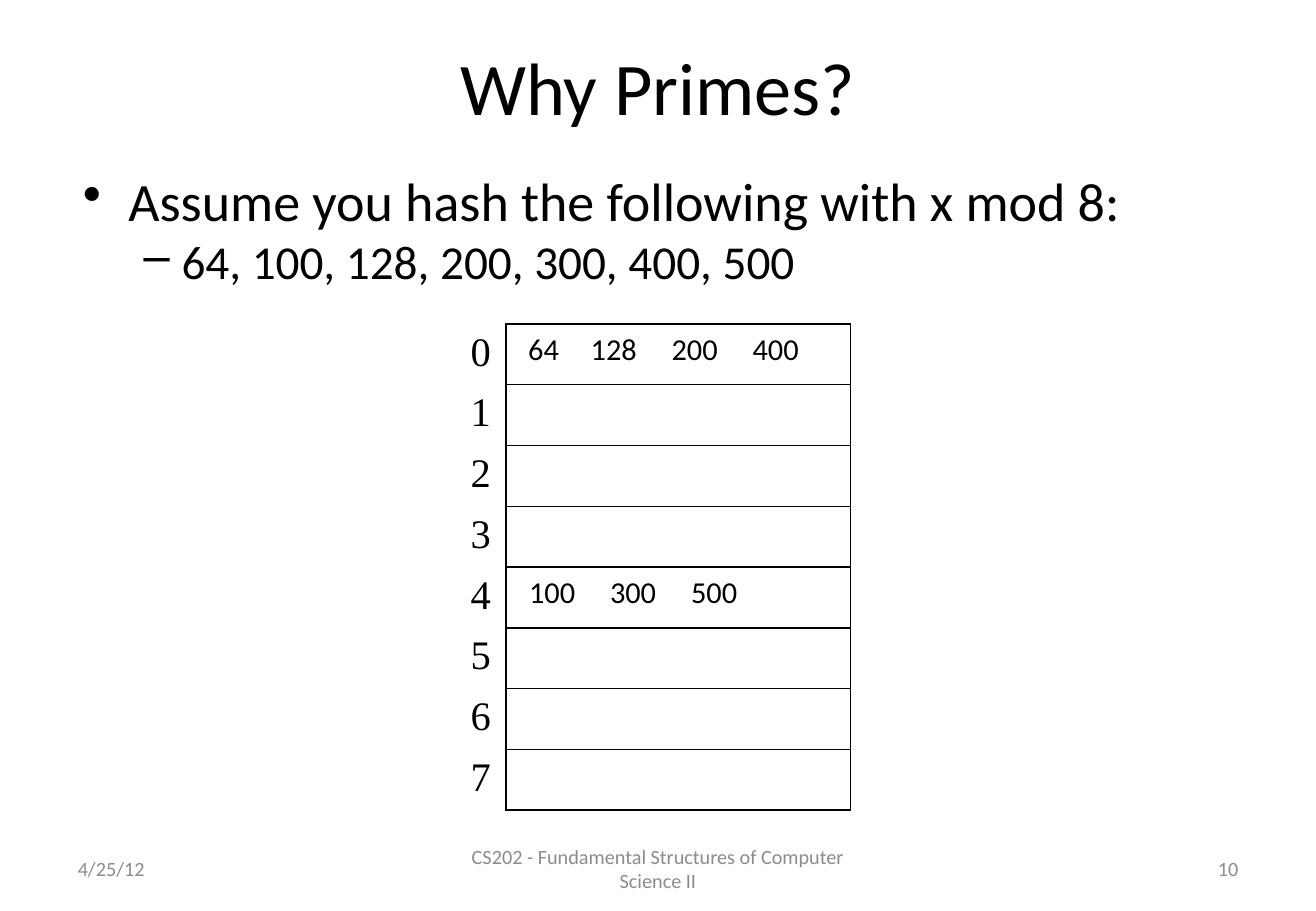
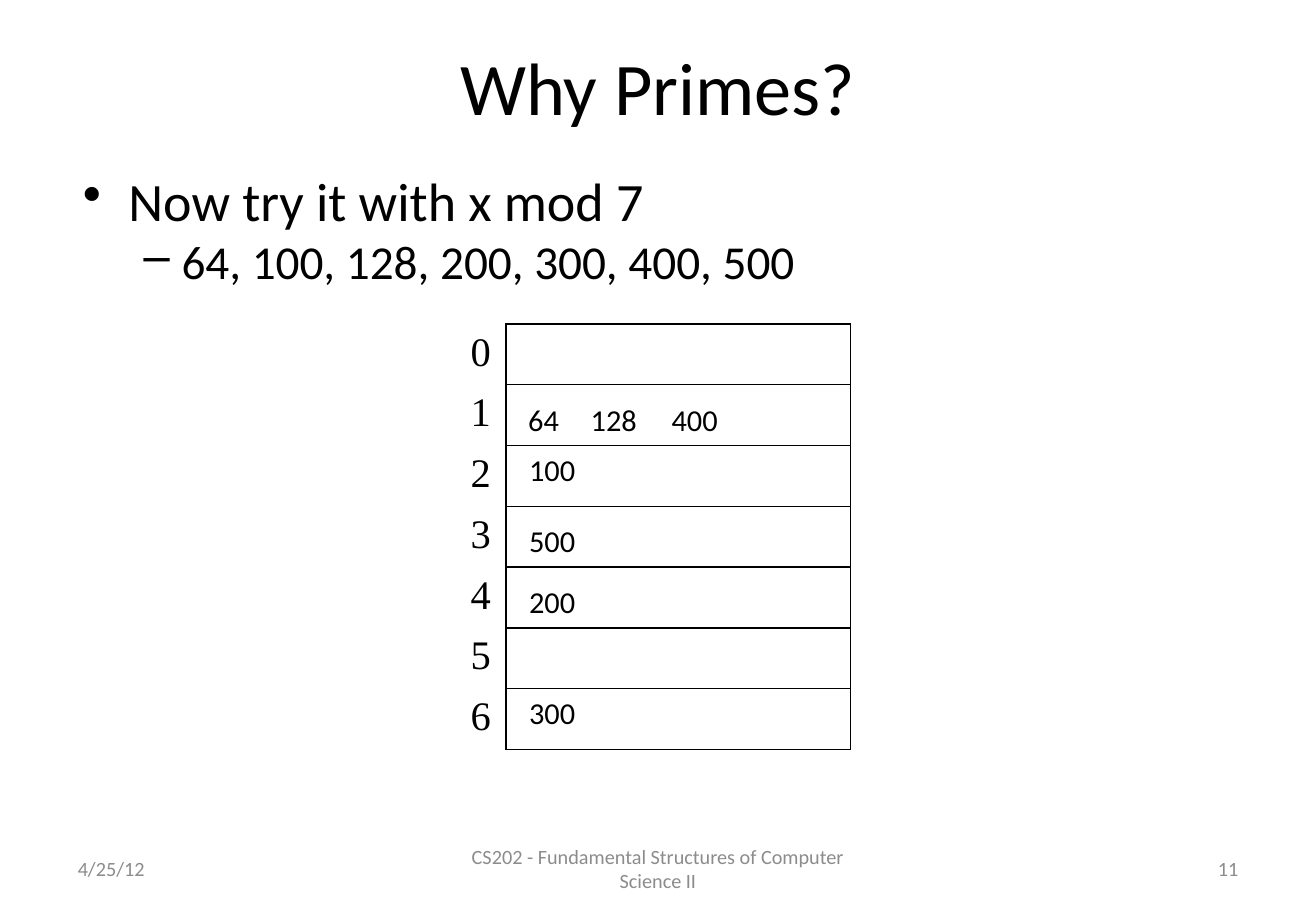
"""Build two slides that compare hashing with x mod 8 and x mod 7."""
import dataclasses

import lxml.etree
import pptx
import pptx.dml.color
import pptx.enum.text
import pptx.oxml.ns
import pptx.presentation
import pptx.shapes.autoshape
import pptx.slide
import pptx.table
import pptx.text.text
import pptx.util

Pt = pptx.util.Pt
Align = pptx.enum.text.PP_ALIGN
Anchor = pptx.enum.text.MSO_ANCHOR

BLACK = pptx.dml.color.RGBColor(0x00, 0x00, 0x00)
GREY = pptx.dml.color.RGBColor(0x8C, 0x8C, 0x8C)
SANS = "Calibri"
SERIF = "Times New Roman"

TITLE = "Why Primes?"
KEYS = "64, 100, 128, 200, 300, 400, 500"
DATE = "4/25/12"
COURSE = "CS202 - Fundamental Structures of Computer Science II"

TABLE_LEFT, TABLE_TOP = 270, 192
INDEX_WIDTH, BUCKET_WIDTH = 30, 204
ROW_HEIGHT = 36
KEY_LEFT, KEY_HEIGHT = 306, 29
KEY_WIDTHS = {2: 32.4, 3: 42.5}
KEY_PITCHES = {2: 36.5, 3: 48}


@dataclasses.dataclass(frozen=True)
class Box:
    left: float
    top: float
    width: float
    height: float


@dataclasses.dataclass(frozen=True)
class Style:
    size: float
    font: str = SANS
    color: pptx.dml.color.RGBColor = BLACK
    align: Align = Align.LEFT


@dataclasses.dataclass(frozen=True)
class Bullet:
    mark: str
    margin: float
    hanging: float
    style: Style


@dataclasses.dataclass(frozen=True)
class Bucket:
    index: int
    keys: tuple[str, ...]
    drop: float = 0


@dataclasses.dataclass(frozen=True)
class HashSlide:
    number: int
    lead: str
    modulus: int
    buckets: tuple[Bucket, ...]


TITLE_STYLE = Style(44, align=Align.CENTER)
INDEX_STYLE = Style(24, SERIF, align=Align.CENTER)
KEY_STYLE = Style(18, align=Align.CENTER)
BULLETS = (
    Bullet("•", 27, 27, Style(32)),
    Bullet("–", 58.5, 22.5, Style(28)),
)
HASH_SLIDES = (
    HashSlide(10, "Assume you hash the following with x mod 8:", 8, (
        Bucket(0, ("64", "128", "200", "400")),
        Bucket(4, ("100", "300", "500")),
    )),
    HashSlide(11, "Now try it with x mod 7", 7, (
        Bucket(1, ("64", "128", "400"), 6),
        Bucket(2, ("100",)),
        Bucket(3, ("500",), 6),
        Bucket(4, ("200",), 6),
        Bucket(6, ("300",)),
    )),
)


def format_paragraph(paragraph: pptx.text.text._Paragraph, style: Style) -> None:
    paragraph.alignment = style.align
    for run in paragraph.runs:
        run.font.size = Pt(style.size)
        run.font.name = style.font
        run.font.color.rgb = style.color


def add_text(slide: pptx.slide.Slide, box: Box, text: str, style: Style,
             anchor: Anchor = Anchor.MIDDLE, wrap: bool = True) -> None:
    frame = slide.shapes.add_textbox(
        Pt(box.left), Pt(box.top), Pt(box.width), Pt(box.height)).text_frame
    frame.word_wrap = wrap
    frame.vertical_anchor = anchor
    frame.text = text
    format_paragraph(frame.paragraphs[0], style)


def add_bullets(slide: pptx.slide.Slide, box: Box, lines: tuple[str, ...]) -> None:
    frame = slide.shapes.add_textbox(
        Pt(box.left), Pt(box.top), Pt(box.width), Pt(box.height)).text_frame
    frame.word_wrap = True
    frame.text = "\n".join(lines)
    for level, (paragraph, bullet) in enumerate(zip(frame.paragraphs, BULLETS)):
        paragraph.level = level
        format_paragraph(paragraph, bullet.style)
        properties = paragraph._p.get_or_add_pPr()
        properties.set("marL", str(Pt(bullet.margin)))
        properties.set("indent", str(-Pt(bullet.hanging)))
        mark = lxml.etree.SubElement(properties, pptx.oxml.ns.qn("a:buChar"))
        mark.set("char", bullet.mark)


def set_borders(cell: pptx.table._Cell, sides: str) -> None:
    properties = cell._tc.get_or_add_tcPr()
    for position, side in enumerate("LRTB"):
        line = lxml.etree.Element(pptx.oxml.ns.qn(f"a:ln{side}"))
        line.set("w", str(Pt(1)))
        if side in sides:
            fill = lxml.etree.SubElement(line, pptx.oxml.ns.qn("a:solidFill"))
            color = lxml.etree.SubElement(fill, pptx.oxml.ns.qn("a:srgbClr"))
            color.set("val", str(BLACK))
        else:
            lxml.etree.SubElement(line, pptx.oxml.ns.qn("a:noFill"))
        properties.insert(position, line)


def add_hash_table(slide: pptx.slide.Slide, modulus: int) -> None:
    table = slide.shapes.add_table(
        modulus, 2, Pt(TABLE_LEFT), Pt(TABLE_TOP),
        Pt(INDEX_WIDTH + BUCKET_WIDTH), Pt(ROW_HEIGHT * modulus)).table
    table.first_row = False
    table.horz_banding = False
    for column, width in zip(table.columns, (INDEX_WIDTH, BUCKET_WIDTH)):
        column.width = Pt(width)
    for index, row in enumerate(table.rows):
        row.height = Pt(ROW_HEIGHT)
        for cell, sides in zip(row.cells, ("R", "LRTB")):
            cell.fill.background()
            set_borders(cell, sides)
        label = row.cells[0].text_frame
        label.text = str(index)
        format_paragraph(label.paragraphs[0], INDEX_STYLE)


def add_keys(slide: pptx.slide.Slide, bucket: Bucket) -> None:
    left = KEY_LEFT
    top = TABLE_TOP + ROW_HEIGHT * bucket.index + bucket.drop
    for key in bucket.keys:
        box = Box(left, top, KEY_WIDTHS[len(key)], KEY_HEIGHT)
        add_text(slide, box, key, KEY_STYLE, Anchor.TOP, wrap=False)
        left += KEY_PITCHES[len(key)]


def add_footer(slide: pptx.slide.Slide, number: int) -> None:
    for left, width, text, align in (
        (39, 182, DATE, Align.LEFT),
        (266.5, 247, COURSE, Align.CENTER),
        (559, 182, str(number), Align.RIGHT),
    ):
        add_text(slide, Box(left, 500.5, width, 28.75), text,
                 Style(12, color=GREY, align=align))


def add_hash_slide(deck: pptx.presentation.Presentation, content: HashSlide) -> None:
    slide = deck.slides.add_slide(deck.slide_layouts[6])
    add_text(slide, Box(39, 18, 702, 66), TITLE, TITLE_STYLE)
    add_bullets(slide, Box(42, 96, 702, 90), (content.lead, KEYS))
    add_footer(slide, content.number)
    add_hash_table(slide, content.modulus)
    for bucket in content.buckets:
        add_keys(slide, bucket)


def main() -> None:
    deck = pptx.Presentation()
    deck.slide_width, deck.slide_height = Pt(780), Pt(540)
    for content in HASH_SLIDES:
        add_hash_slide(deck, content)
    deck.save("out.pptx")


if __name__ == "__main__":
    main()
